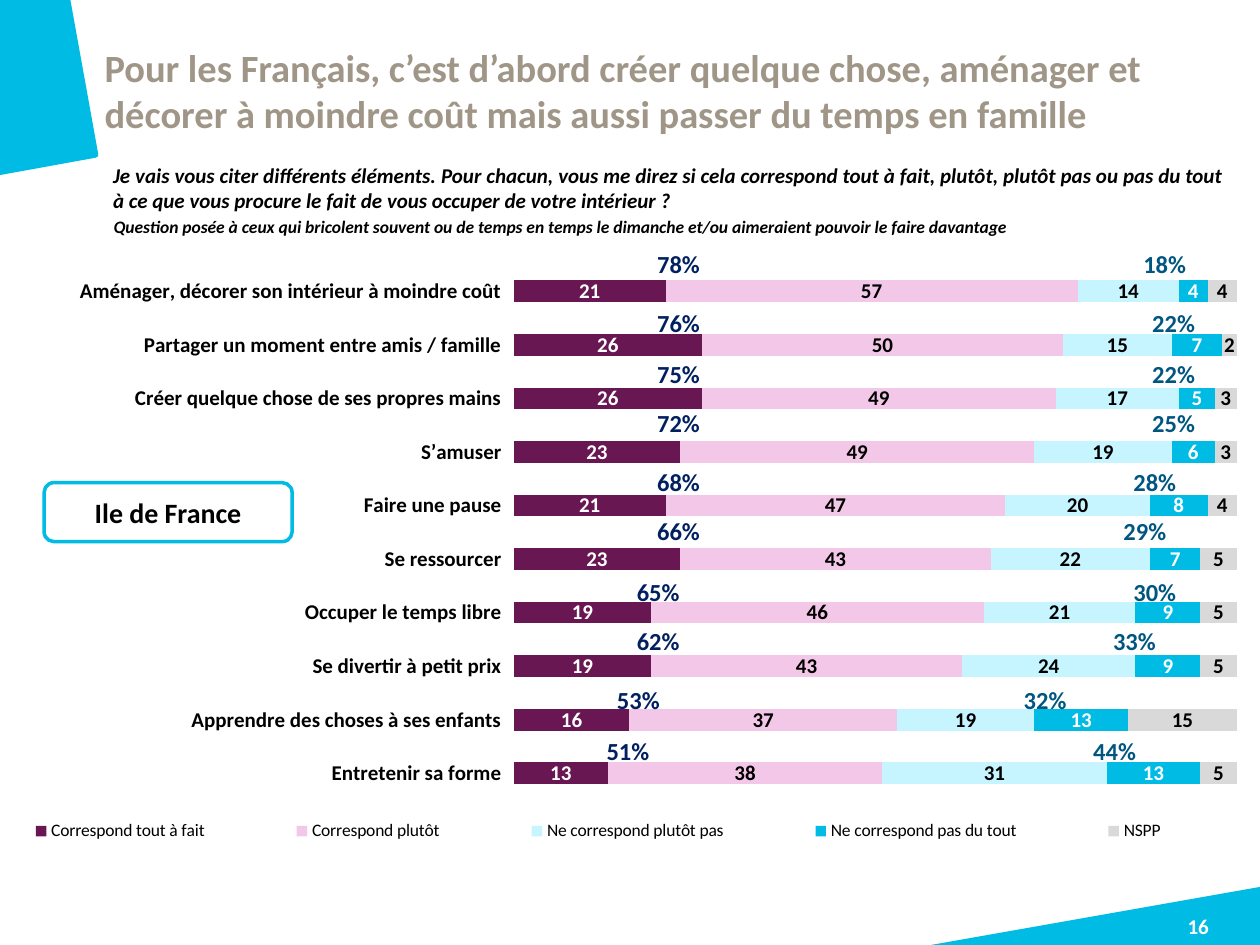
from lxml import etree
from pptx import Presentation
from pptx.chart.data import CategoryChartData
from pptx.dml.color import RGBColor
from pptx.enum.chart import XL_CHART_TYPE, XL_LEGEND_POSITION, XL_TICK_MARK
from pptx.enum.shapes import MSO_SHAPE
from pptx.enum.text import MSO_ANCHOR, PP_ALIGN
from pptx.oxml.ns import qn
from pptx.util import Cm, Pt

BAR_STACKED_100 = XL_CHART_TYPE.BAR_STACKED_100
BOTTOM = XL_LEGEND_POSITION.BOTTOM
CROSS = XL_TICK_MARK.CROSS
ROUNDED = MSO_SHAPE.ROUNDED_RECTANGLE
MIDDLE = MSO_ANCHOR.MIDDLE
LEFT, CENTER, JUSTIFY = PP_ALIGN.LEFT, PP_ALIGN.CENTER, PP_ALIGN.JUSTIFY

FONT = "Calibri"
COLORS = {
    "cyan": "00BCE4",
    "taupe": "A09687",
    "plum": "691752",
    "pink": "F3C7E7",
    "pale": "C7F5FF",
    "grey": "D9D9D9",
    "navy": "002060",
    "petrol": "005680",
    "black": "000000",
    "white": "FFFFFF",
}

TITLE = (
    "Pour les Français, c’est d’abord créer quelque chose, aménager et "
    "décorer à moindre coût mais aussi passer du temps en famille"
)
QUESTION = (
    "Je vais vous citer différents éléments. Pour chacun, vous me direz si cela "
    "correspond tout à fait, plutôt, plutôt pas ou pas du tout à ce que vous "
    "procure le fait de vous occuper de votre intérieur ?"
)
AUDIENCE = (
    "Question posée à ceux qui bricolent souvent ou de temps en temps le "
    "dimanche et/ou aimeraient pouvoir le faire davantage"
)

CATEGORIES = [
    "Aménager, décorer son intérieur à moindre coût",
    "Partager un moment entre amis / famille",
    "Créer quelque chose de ses propres mains",
    "S’amuser",
    "Faire une pause",
    "Se ressourcer",
    "Occuper le temps libre",
    "Se divertir à petit prix",
    "Apprendre des choses à ses enfants",
    "Entretenir sa forme",
]
SERIES = [
    ("Correspond tout à fait", [21, 26, 26, 23, 21, 23, 19, 19, 16, 13], "plum", "white"),
    ("Correspond plutôt", [57, 50, 49, 49, 47, 43, 46, 43, 37, 38], "pink", "black"),
    ("Ne correspond plutôt pas", [14, 15, 17, 19, 20, 22, 21, 24, 19, 31], "pale", "black"),
    ("Ne correspond pas du tout", [4, 7, 5, 6, 8, 7, 9, 9, 13, 13], "cyan", "white"),
    ("NSPP", [4, 2, 3, 3, 4, 5, 5, 5, 15, 5], "grey", "black"),
]
TOTAL_TOPS = [4.93, 6.12, 7.14, 8.13, 9.32, 10.31, 11.53, 12.52, 13.72, 14.73]
AGREE_LEFTS = [12.88] * 6 + [12.47, 12.47, 12.07, 11.86]
DISAGREE_LEFTS = [22.68, 22.86, 22.86, 22.86, 22.48, 22.28, 22.48, 22.07, 20.27, 21.67]

CORNER = [(0, 0), (142, 0), (198, 310), (198, 315), (193, 318), (0, 353)]
WEDGE = [(1877, 1905), (2540, 1788), (2540, 1905)]


def rgb(name):
    return RGBColor.from_string(COLORS[name])


def style_font(font, size, color, **extra):
    for key, value in {"name": FONT, "size": Pt(size), **extra}.items():
        setattr(font, key, value)
    font.color.rgb = rgb(color)


def write(box, text, align, size, color, **extra):
    para = box.text_frame.paragraphs[0]
    para.alignment = align
    span = para.add_run()
    span.text = text
    style_font(span.font, size, color, bold=True, **extra)


def add_text(page, place, text, align, size, color, inset=True, **extra):
    box = page.shapes.add_textbox(*map(Cm, place))
    frame = box.text_frame
    frame.word_wrap = True
    if not inset:
        for side in ("left", "top", "right", "bottom"):
            setattr(frame, f"margin_{side}", 0)
    write(box, text, align, size, color, **extra)


def add_rounded(page, place, text, size, color, outline=None):
    box = page.shapes.add_shape(ROUNDED, *map(Cm, place))
    box.shadow.inherit = False
    box.fill.background()
    if outline:
        box.line.color.rgb = rgb(outline)
        box.line.width = Pt(2)
    else:
        box.line.fill.background()
    box.text_frame.word_wrap = False
    box.text_frame.vertical_anchor = MIDDLE
    write(box, text, CENTER, size, color)


def add_outline(page, points):
    builder = page.shapes.build_freeform(*points[0], scale=Cm(0.01))
    builder.add_line_segments(points[1:], close=True)
    shape = builder.convert_to_shape()
    shape.shadow.inherit = False
    shape.fill.solid()
    shape.fill.fore_color.rgb = rgb("cyan")
    shape.line.fill.background()


def set_layout(parent, before, inner, x, y, w, h):
    for old in parent.findall(qn("c:layout")):
        parent.remove(old)
    layout = etree.Element(qn("c:layout"))
    manual = etree.SubElement(layout, qn("c:manualLayout"))
    values = {"layoutTarget": "inner"} if inner else {}
    values.update(xMode="edge", yMode="edge", x=x, y=y, w=w, h=h)
    for tag, value in values.items():
        etree.SubElement(manual, qn(f"c:{tag}")).set("val", str(value))
    if before is None:
        parent.insert(0, layout)
    else:
        before.addnext(layout)


def add_bars(page):
    data = CategoryChartData(number_format="0")
    data.categories = CATEGORIES
    for name, values, _, _ in SERIES:
        data.add_series(name, values)
    place = map(Cm, (-1.02, 4.93, 26.16, 12.19))
    chart = page.shapes.add_chart(BAR_STACKED_100, *place, data).chart
    style_font(chart.font, 18, "taupe")
    chart.has_title = False

    axis = chart.category_axis
    axis.reverse_order = True
    axis.major_tick_mark = CROSS
    axis.format.line.fill.background()
    style_font(axis.tick_labels.font, 12, "black", bold=True)
    chart.value_axis.visible = False
    chart.value_axis.has_major_gridlines = False

    chart.has_legend = True
    legend = chart.legend
    legend.position = BOTTOM
    legend.include_in_layout = False
    style_font(legend.font, 10, "black")
    position = legend._element.find(qn("c:legendPos"))
    set_layout(legend._element, position, False, 0, 0.94, 1, 0.06)
    plot_area = chart._chartSpace.chart.plotArea
    set_layout(plot_area, None, True, 0.435, 0.033, 0.557, 0.886)

    plot = chart.plots[0]
    plot.overlap = 100
    plot.gap_width = 148
    for series, (_, _, fill, label) in zip(plot.series, SERIES):
        series.format.fill.solid()
        series.format.fill.fore_color.rgb = rgb(fill)
        series.data_labels.show_value = True
        style_font(series.data_labels.font, 12, label, bold=True)


def add_totals(page):
    values = [series[1] for series in SERIES]
    groups = [(AGREE_LEFTS, values[:2], "navy"), (DISAGREE_LEFTS, values[2:4], "petrol")]
    for lefts, parts, color in groups:
        for left, top, *pair in zip(lefts, TOTAL_TOPS, *parts):
            add_rounded(page, (left, top, 1.6, 0.79), f"{sum(pair)}%", 14, color)


def main():
    deck = Presentation()
    deck.slide_width, deck.slide_height = Cm(25.4), Cm(19.05)
    page = deck.slides.add_slide(deck.slide_layouts[6])
    add_outline(page, WEDGE)
    add_outline(page, CORNER)
    add_text(page, (22.91, 18.42, 2.49, 0.63), "16", CENTER, 12, "white", inset=False)
    add_text(page, (2.11, 0.88, 23.29, 1.9), TITLE, LEFT, 22, "taupe", inset=False)
    add_text(page, (2.03, 3.15, 22.89, 1.2), QUESTION, JUSTIFY, 12, "black", italic=True)
    add_text(page, (0.89, 4.24, 20.8, 0.69), AUDIENCE, CENTER, 10, "black", italic=True)
    add_bars(page)
    add_totals(page)
    add_rounded(page, (0.89, 9.73, 5, 1.19), "Ile de France", 16, "black", "cyan")
    deck.save("out.pptx")


if __name__ == "__main__":
    main()
